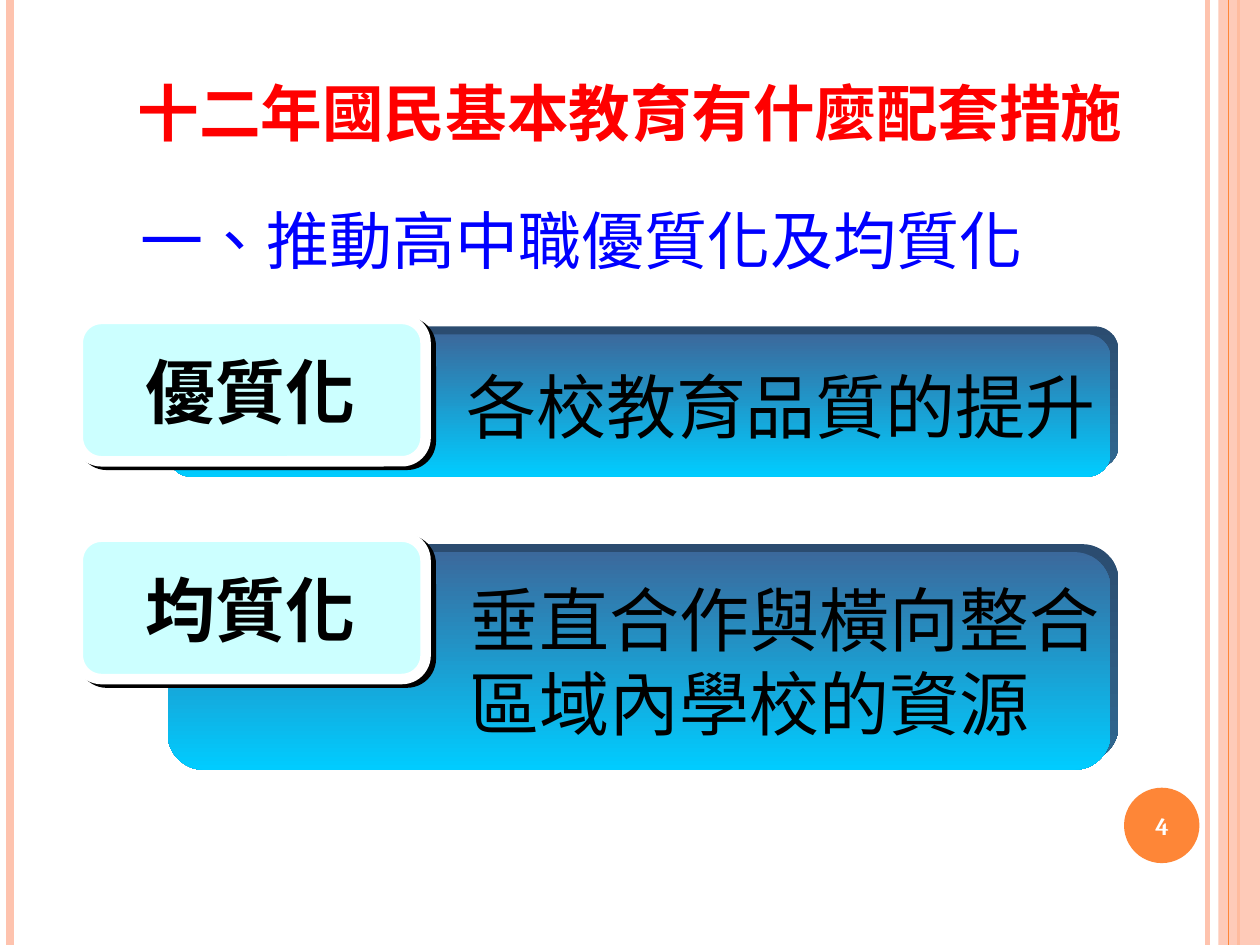
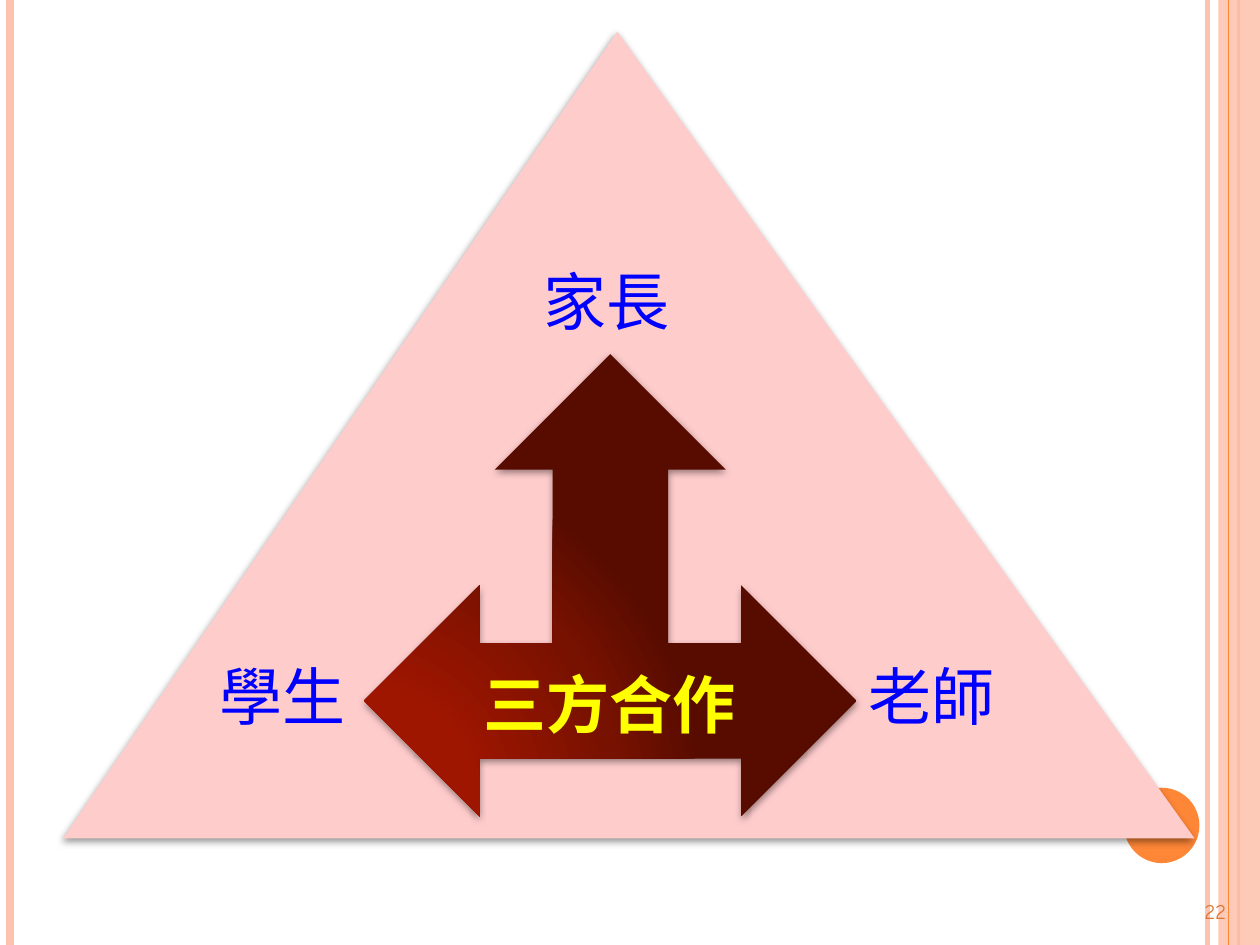
"""Build two slides on the support measures of twelve-year basic education."""
from lxml import etree
from pptx import Presentation, util as u
from pptx.dml.color import RGBColor
from pptx.enum import shapes, text
from pptx.oxml import parse_xml
from pptx.oxml.ns import nsdecls, qn

TITLE = "十二年國民基本教育有什麼配套措施"
SUBTITLE = "一、推動高中職優質化及均質化"
MEASURES = [
    ("優質化", ["各校教育品質的提升"], 6.74, 2.87),
    ("均質化", ["垂直合作與橫向整合", "區域內學校的資源"], 11.13, 4.39),
]
PARTNERS = [
    ("學生", (4.17, 13.13, 3.58, 1.78)),
    ("家長", (10.7, 5.16, 3.38, 1.78)),
    ("老師", (17.25, 13.13, 3.38, 1.78)),
]
COOPERATION = "三方合作"

WIDTH, HEIGHT = 25.4, 19.05
PEACH = RGBColor(0xFE, 0xC3, 0xAE)
ORANGE = RGBColor(0xFE, 0x86, 0x37)
RUST = RGBColor(0xE0, 0x76, 0x31)
RED = RGBColor(0xFF, 0x00, 0x00)
BLUE = RGBColor(0x00, 0x00, 0xFF)
YELLOW = RGBColor(0xFF, 0xFF, 0x00)
WHITE = RGBColor(0xFF, 0xFF, 0xFF)
BLACK = RGBColor(0x00, 0x00, 0x00)
PALE_CYAN = RGBColor(0xCC, 0xFF, 0xFF)
PINK = RGBColor(0xFF, 0xCC, 0xCC)
PANEL_STOPS = [(0, RGBColor(0x3B, 0x69, 0x9C)), (100, RGBColor(0x00, 0xCC, 0xFF))]
DEPTH_STOPS = [(0, RGBColor(0x2B, 0x4C, 0x70)), (100, RGBColor(0x30, 0x68, 0x90))]
ARROW_STOPS = [
    (0, RGBColor(0xA4, 0x17, 0x00)), (30, RGBColor(0x9F, 0x16, 0x00)),
    (75, RGBColor(0x77, 0x11, 0x00)), (100, RGBColor(0x58, 0x0C, 0x00)),
]
DOWNWARD = '<a:lin ang="5400000" scaled="0"/>'
RADIAL = ('<a:path path="circle">'
          '<a:fillToRect l="5000" t="100000" r="120000" b="10000"/></a:path>')
SANS = "Noto Sans CJK SC"
EDGE_LINES = [(24.34, PEACH, 3), (0.21, PEACH, 4.5), (24.97, ORANGE, 1.5)]
INNER_LINE = (24.77, ORANGE, 0.75)
SOFT_SHADOW = dict(alpha=42, blur=4, distance=1.6, angle=90)
HARD_SHADOW = dict(alpha=100, blur=0, distance=3.6, angle=34)


def write(shape, lines, size=36, font=SANS, color=BLACK, bold=False, align="LEFT",
          anchor="MIDDLE", insets=(0.25, 0.13, 0.25, 0.13), before=0, wrap=True):
    """Fill a shape with formatted paragraphs."""
    frame = shape.text_frame
    frame.word_wrap = wrap
    frame.vertical_anchor = getattr(text.MSO_ANCHOR, anchor)
    (frame.margin_left, frame.margin_top,
     frame.margin_right, frame.margin_bottom) = map(u.Cm, insets)
    for index, line in enumerate(lines):
        paragraph = frame.add_paragraph() if index else frame.paragraphs[0]
        paragraph.alignment = getattr(text.PP_ALIGN, align)
        paragraph.space_before = u.Pt(before)
        run = paragraph.add_run()
        run.text = line
        run.font.size = u.Pt(size)
        run.font.bold = bold
        run.font.name = font
        run.font.color.rgb = color
        run.font._element.set("lang", "zh-TW")
        east_asian = etree.SubElement(run.font._element, qn("a:ea"))
        east_asian.set("typeface", font)


def add_text(slide, box, line, **style):
    """Add a one-line text box."""
    write(slide.shapes.add_textbox(*map(u.Cm, box)), [line], **style)


def add_shape(slide, kind, box, fill=None, stops=(), direction=DOWNWARD,
              opacity=100, shadow=None, adjust=None):
    """Add an unlined preset shape with a solid or gradient fill."""
    shape = slide.shapes.add_shape(getattr(shapes.MSO_SHAPE, kind), *map(u.Cm, box))
    shape.shadow.inherit = False
    shape.line.fill.background()
    if adjust is not None:
        shape.adjustments[0] = adjust
    if stops:
        marks = "".join(f'<a:gs pos="{place * 1000}"><a:srgbClr val="{color}"/></a:gs>'
                        for place, color in stops)
        shape._element.spPr.find(qn("a:prstGeom")).addnext(parse_xml(
            f'<a:gradFill {nsdecls("a")} rotWithShape="1">'
            f'<a:gsLst>{marks}</a:gsLst>{direction}</a:gradFill>'))
    else:
        shape.fill.solid()
        shape.fill.fore_color.rgb = fill
        if opacity < 100:
            color = shape._element.spPr.find(qn("a:solidFill"))[0]
            etree.SubElement(color, qn("a:alpha")).set("val", str(opacity * 1000))
    if shadow:
        shape._element.spPr.find(qn("a:effectLst")).append(parse_xml(
            f'<a:outerShdw {nsdecls("a")} blurRad="{u.Pt(shadow["blur"])}" '
            f'dist="{u.Pt(shadow["distance"])}" dir="{shadow["angle"] * 60000}" '
            f'algn="ctr" rotWithShape="0"><a:srgbClr val="{BLACK}">'
            f'<a:alpha val="{shadow["alpha"] * 1000}"/></a:srgbClr></a:outerShdw>'))
    return shape


def add_vertical_line(slide, left, color, width):
    """Draw a line down the full height of the slide."""
    line = slide.shapes.add_connector(shapes.MSO_CONNECTOR.STRAIGHT, u.Cm(left), 0,
                                      u.Cm(left), u.Cm(HEIGHT))
    line.line.color.rgb = color
    line.line.width = u.Pt(width)
    etree.SubElement(line._element.spPr, qn("a:effectLst"))


def add_slide(presentation):
    """Add a blank slide with the shared edge bands and number disc."""
    slide = presentation.slides.add_slide(presentation.slide_layouts[6])
    for edge in EDGE_LINES:
        add_vertical_line(slide, *edge)
    add_shape(slide, "RECTANGLE", (24.56, 0, 0.84, HEIGHT), PEACH, opacity=87)
    add_vertical_line(slide, *INNER_LINE)
    add_shape(slide, "OVAL", (22.66, 15.88, 1.52, 1.52), ORANGE)
    return slide


def add_measure(slide, name, lines, top, height):
    """Draw a raised panel with its glossy label at the upper left."""
    left, width, depth = 3.38, 19.01, 0.16
    add_shape(slide, "ROUNDED_RECTANGLE", (left + depth, top - depth, width, height),
              stops=DEPTH_STOPS)
    panel = add_shape(slide, "ROUNDED_RECTANGLE", (left, top, width, height),
                      stops=PANEL_STOPS)
    write(panel, lines, size=40, font="Arial", insets=(5.88, 0.13, 0, 0.13), wrap=False)
    label_top = top - 0.31
    label = add_shape(slide, "ROUNDED_RECTANGLE", (1.57, label_top, 7.01, 2.87),
                      PALE_CYAN, shadow=HARD_SHADOW)
    label.line.color.rgb = WHITE
    label.line.width = u.Pt(6)
    add_shape(slide, "ROUNDED_RECTANGLE", (1.78, label_top + 0.24, 6.6, 1.02),
              PALE_CYAN, opacity=67, adjust=0.28)
    add_shape(slide, "OVAL", (2.36, label_top + 0.2, 5.54, 0.56), PALE_CYAN)
    caption = add_shape(slide, "RECTANGLE", (2.69, label_top + 0.46, 4.72, 1.96),
                        PALE_CYAN)
    write(caption, [name], size=40, font="Arial", bold=True, wrap=False)


def build_measures(presentation):
    """Build the slide of support measures."""
    slide = add_slide(presentation)
    add_text(slide, (22.58, 15.93, 1.7, 1.45), "4", size=14, font="Cambria",
             color=WHITE, bold=True, align="CENTER")
    add_text(slide, (0, 0.99, WIDTH, 2.21), TITLE, size=35.2, color=RED, bold=True,
             align="CENTER", anchor="BOTTOM", insets=(0, 0, 0, 0.2))
    add_text(slide, (2.59, 3.94, 22.81, 12.6), SUBTITLE, font="Arial", color=BLUE,
             anchor="TOP", before=6)
    for measure in MEASURES:
        add_measure(slide, *measure)


def build_cooperation(presentation):
    """Build the slide of three-way cooperation."""
    slide = add_slide(presentation)
    add_text(slide, (22.86, 17.98, 2.11, 0.69), "22", size=12, font="Comic Neue",
             color=RUST, align="RIGHT", anchor="TOP")
    add_shape(slide, "ISOSCELES_TRIANGLE", (1.27, 0.64, 22.81, 16.26), PINK,
              shadow=SOFT_SHADOW, adjust=0.49)
    for name, box in PARTNERS:
        add_text(slide, box, name, color=BLUE)
    add_shape(slide, "LEFT_RIGHT_UP_ARROW", (7.34, 7.14, 9.93, 9.32),
              stops=ARROW_STOPS, direction=RADIAL, shadow=SOFT_SHADOW)
    add_text(slide, (9.5, 13.28, 5.77, 1.78), COOPERATION, color=YELLOW, bold=True)


def main():
    """Create and save the presentation."""
    presentation = Presentation()
    presentation.slide_width, presentation.slide_height = u.Cm(WIDTH), u.Cm(HEIGHT)
    build_measures(presentation)
    build_cooperation(presentation)
    presentation.save("out.pptx")


if __name__ == "__main__":
    main()
